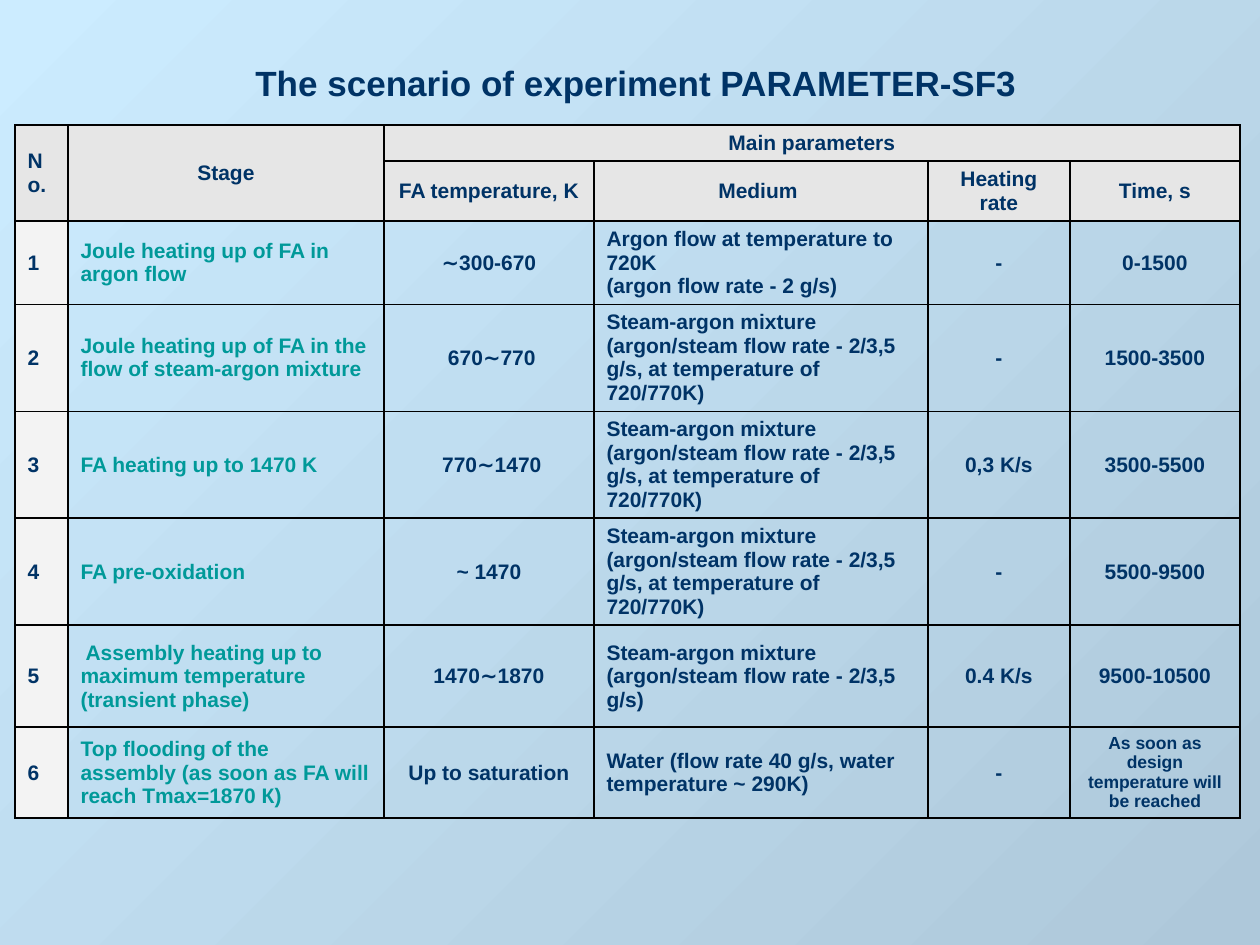
import pptx
import pptx.util
import pptx.dml.color
import pptx.enum.text
import pptx.oxml.ns
import lxml.etree
from dataclasses import dataclass

ALIGN = pptx.enum.text.PP_ALIGN
MIDDLE = pptx.enum.text.MSO_ANCHOR.MIDDLE


@dataclass(frozen=True)
class Theme:
    font: str = "Arial"
    ink: str = "003366"
    stage: str = "009999"
    head: str = "E6E6E6"
    number: str = "F3F3F3"
    line: str = "000000"
    bg_from: str = "CCECFF"
    bg_to: str = "AEC8DA"
    title_size: int = 20
    body_size: int = 12
    small_size: int = 10


THEME = Theme()
COLUMN_EDGES = [15, 68, 384, 594, 928, 1070, 1240]
ROW_EDGES = [125, 161, 221, 304, 411, 518, 625, 727, 818]
CENTERED = {2, 4, 5}

MIXTURE = "Steam-argon mixture (argon/steam flow rate - 2/3,5 g/s"
HEADS = ["FA temperature, K", "Medium ", "Heating rate", "Time, s"]
STAGES = [
    ("Joule heating up of FA in argon flow", "∼300-670",
     "Argon flow at temperature to 720K\n(argon flow rate - 2 g/s)", "-", "0-1500"),
    ("Joule heating up of FA in the flow of steam-argon mixture", " 670∼770",
     MIXTURE + ", at temperature of 720/770K)", "-", "1500-3500"),
    ("FA heating up to 1470 K ", " 770∼1470",
     MIXTURE + ", at temperature of 720/770К)", "0,3 K/s", "3500-5500"),
    ("FA pre-oxidation", "~ 1470",
     MIXTURE + ", at temperature of 720/770K)", "-", "5500-9500"),
    (" Assembly heating up to maximum temperature\n(transient phase)", "1470∼1870",
     MIXTURE + ")", "0.4 K/s", "9500-10500"),
    ("Top flooding of the  assembly (as soon as FA will reach Tmax=1870 К)",
     "Up to saturation", "Water (flow rate 40 g/s, water temperature ~ 290K)", "-",
     "As soon as design temperature will be reached"),
]


def px(n):
    return pptx.util.Emu(round(n * 914400 / 126))


def rgb(color):
    return pptx.dml.color.RGBColor.from_string(color)


def write(tf, text, size=THEME.body_size, color=THEME.ink, align=ALIGN.LEFT, before=0):
    for i, line in enumerate(text.split("\n")):
        p = tf.paragraphs[0] if i == 0 else tf.add_paragraph()
        p.alignment = align
        p.space_before = pptx.util.Pt(before)
        r = p.add_run()
        r.text = line
        r.font.name = THEME.font
        r.font.size = pptx.util.Pt(size)
        r.font.bold = True
        r.font.color.rgb = rgb(color)


def paint_background(s):
    fill = s.background.fill
    fill.gradient()
    fill.gradient_angle = 315
    for stop, position, color in zip(fill.gradient_stops, (0, 1), (THEME.bg_from, THEME.bg_to)):
        stop.position = position
        stop.color.rgb = rgb(color)


def add_title(s, text):
    sp = s.shapes.add_textbox(px(238), px(55), px(793), px(54))
    tf = sp.text_frame
    tf.word_wrap = False
    tf.auto_size = pptx.enum.text.MSO_AUTO_SIZE.SHAPE_TO_FIT_TEXT
    tf.vertical_anchor = MIDDLE
    write(tf, text, size=THEME.title_size, before=4)
    tf.paragraphs[0]._p.get_or_add_pPr().set("indent", str(px(5)))


def style_cell(cell, fill=None):
    cell.vertical_anchor = MIDDLE
    if fill:
        cell.fill.solid()
        cell.fill.fore_color.rgb = rgb(fill)
    else:
        cell.fill.background()
    qn = pptx.oxml.ns.qn
    tcPr = cell._tc.get_or_add_tcPr()
    for i, side in enumerate(("lnL", "lnR", "lnT", "lnB")):
        ln = lxml.etree.Element(qn("a:" + side), w=str(pptx.util.Pt(1)))
        solid = lxml.etree.SubElement(ln, qn("a:solidFill"))
        lxml.etree.SubElement(solid, qn("a:srgbClr"), val=THEME.line)
        tcPr.insert(i, ln)


def set_sizes(tracks, edges, attribute):
    for track, start, end in zip(tracks, edges, edges[1:]):
        setattr(track, attribute, px(end - start))


def fill_header(table):
    table.cell(0, 0).merge(table.cell(1, 0))
    table.cell(0, 1).merge(table.cell(1, 1))
    table.cell(0, 2).merge(table.cell(0, 5))
    write(table.cell(0, 0).text_frame, "No.")
    write(table.cell(0, 1).text_frame, "Stage", align=ALIGN.CENTER)
    write(table.cell(0, 2).text_frame, "Main parameters", align=ALIGN.CENTER)
    for col, head in enumerate(HEADS, 2):
        write(table.cell(1, col).text_frame, head, align=ALIGN.CENTER)


def fill_stages(table):
    for number, stage in enumerate(STAGES, 1):
        for col, text in enumerate((str(number), *stage)):
            last = number == len(STAGES) and col == len(stage)
            write(table.cell(number + 1, col).text_frame, text,
                  size=THEME.small_size if last else THEME.body_size,
                  color=THEME.stage if col == 1 else THEME.ink,
                  align=ALIGN.CENTER if col in CENTERED else ALIGN.LEFT)


def add_scenario_table(s):
    left, right = COLUMN_EDGES[0], COLUMN_EDGES[-1]
    top, bottom = ROW_EDGES[0], ROW_EDGES[-1]
    table = s.shapes.add_table(len(ROW_EDGES) - 1, len(COLUMN_EDGES) - 1,
                               px(left), px(top), px(right - left), px(bottom - top)).table
    table.first_row = False
    table.horz_banding = False
    set_sizes(table.columns, COLUMN_EDGES, "width")
    set_sizes(table.rows, ROW_EDGES, "height")
    for row in range(len(table.rows)):
        for col in range(len(table.columns)):
            fill = THEME.head if row < 2 else THEME.number if col == 0 else None
            style_cell(table.cell(row, col), fill)
    fill_header(table)
    fill_stages(table)


def main():
    prs = pptx.Presentation()
    prs.slide_width, prs.slide_height = px(1260), px(945)
    s = prs.slides.add_slide(prs.slide_layouts[6])
    paint_background(s)
    add_scenario_table(s)
    add_title(s, "The scenario of experiment PARAMETER-SF3")
    prs.save("out.pptx")


if __name__ == "__main__":
    main()
